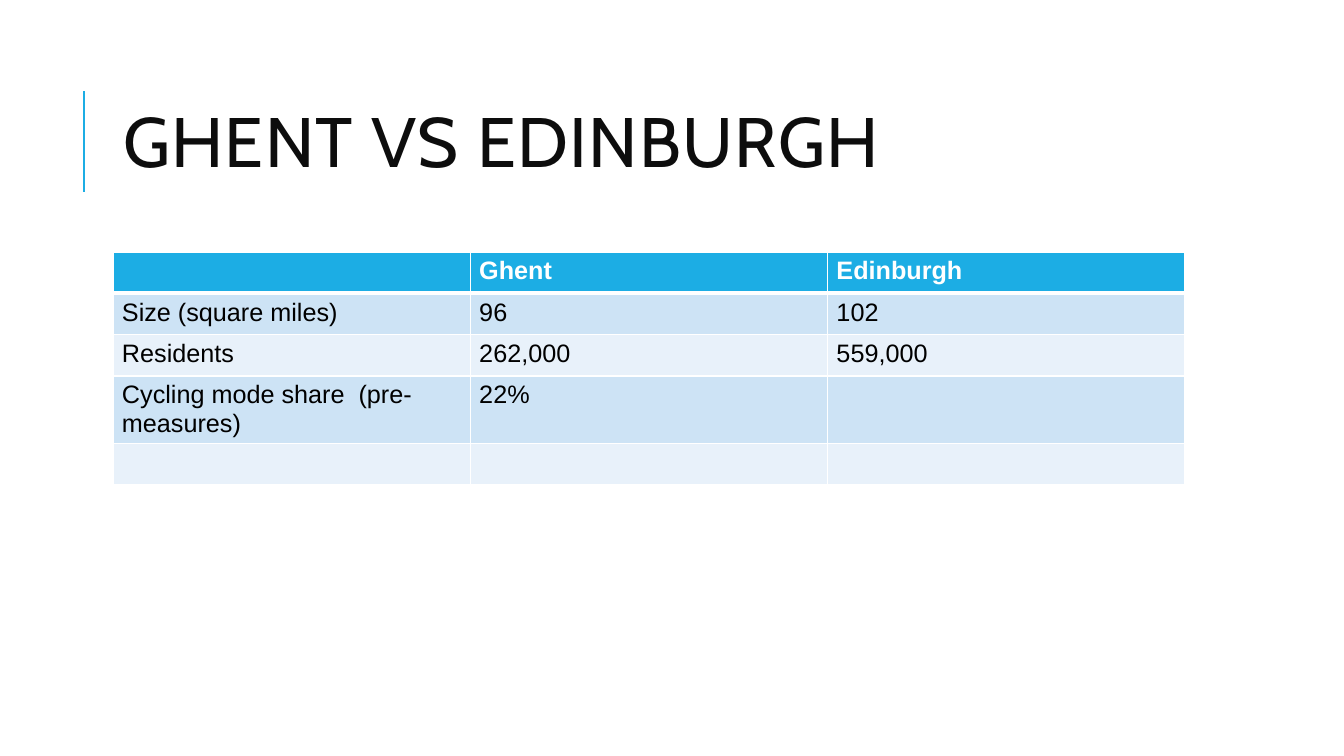
import pptx
import pptx.dml.color
import pptx.enum.shapes
import pptx.enum.text
import pptx.oxml
import pptx.oxml.ns
import pptx.util
from pptx.util import Inches

RGBColor = pptx.dml.color.RGBColor
ACCENT = RGBColor(0x1C, 0xAD, 0xE4)
TITLE_INK = RGBColor(0x0D, 0x0D, 0x0D)
BLACK = RGBColor(0, 0, 0)
WHITE = RGBColor(0xFF, 0xFF, 0xFF)
BAND_DARK = RGBColor(0xCD, 0xE3, 0xF5)
BAND_LIGHT = RGBColor(0xE8, 0xF1, 0xFA)

CITY_ROWS = [
    ["", "Ghent", "Edinburgh"],
    ["Size (square miles)", "96", "102"],
    ["Residents", "262,000", "559,000"],
    ["Cycling mode share  (pre-measures)", "22%", ""],
    ["", "", ""],
]
ROW_HEIGHTS = [0.41, 0.41, 0.41, 0.67, 0.41]


def add_borders(cell, bottom_width):
    """Draw white lines round a cell, with its own bottom width in points."""
    sides = [("lnL", 1), ("lnR", 1), ("lnT", 1), ("lnB", bottom_width)]
    properties = cell._tc.get_or_add_tcPr()
    for position, (side, width) in enumerate(sides):
        properties.insert(position, pptx.oxml.parse_xml(
            f'<a:{side} {pptx.oxml.ns.nsdecls("a")} w="{pptx.util.Pt(width)}">'
            f'<a:solidFill><a:srgbClr val="{WHITE}"/></a:solidFill></a:{side}>'))


deck = pptx.Presentation()
deck.slide_width = Inches(13.33)
deck.slide_height = Inches(7.5)
slide = deck.slides.add_slide(deck.slide_layouts[5])
slide.background.fill.solid()
slide.background.fill.fore_color.rgb = WHITE

# Accent line beside the title
title_rule = slide.shapes.add_connector(
    pptx.enum.shapes.MSO_CONNECTOR.STRAIGHT,
    Inches(0.83), Inches(1.9), Inches(0.83), Inches(0.9))
title_rule.line.color.rgb = ACCENT
title_rule.line.width = pptx.util.Pt(1.5)
title_rule._element.spPr.append(
    pptx.oxml.parse_xml(f'<a:effectLst {pptx.oxml.ns.nsdecls("a")}/>'))

# Title
title = slide.shapes.title
title.left, title.top = Inches(1.12), Inches(0.64)
title.width, title.height = Inches(10.63), Inches(1.64)
title.text_frame.word_wrap = True
title.text_frame.auto_size = pptx.enum.text.MSO_AUTO_SIZE.NONE
title.text_frame.vertical_anchor = pptx.enum.text.MSO_ANCHOR.MIDDLE
heading = title.text_frame.paragraphs[0]
heading.alignment = pptx.enum.text.PP_ALIGN.LEFT
heading.line_spacing = 0.8
heading_run = heading.add_run()
heading_run.text = "GHENT VS EDINBURGH"
heading_run.font.name = "Cabin"
heading_run.font.size = pptx.util.Pt(50)
heading_run.font.color.rgb = TITLE_INK
heading_run._r.get_or_add_rPr().set("spc", "100")

# City comparison table
comparison = slide.shapes.add_table(
    len(CITY_ROWS), len(CITY_ROWS[0]), Inches(1.12), Inches(2.5),
    Inches(10.63), Inches(sum(ROW_HEIGHTS))).table
for row_index, (values, height) in enumerate(zip(CITY_ROWS, ROW_HEIGHTS)):
    comparison.rows[row_index].height = Inches(height)
    is_header = row_index == 0
    band = BAND_DARK if row_index % 2 else BAND_LIGHT
    for column_index, value in enumerate(values):
        cell = comparison.cell(row_index, column_index)
        cell.margin_left = cell.margin_right = Inches(0.09)
        cell.margin_top = cell.margin_bottom = Inches(0.05)
        cell.fill.solid()
        cell.fill.fore_color.rgb = ACCENT if is_header else band
        add_borders(cell, 3 if is_header else 1)
        if value:
            run = cell.text_frame.paragraphs[0].add_run()
            run.text = value
            run.font.name = "Arial"
            run.font.size = pptx.util.Pt(18)
            run.font.bold = is_header
            run.font.color.rgb = WHITE if is_header else BLACK

deck.save("out.pptx")
